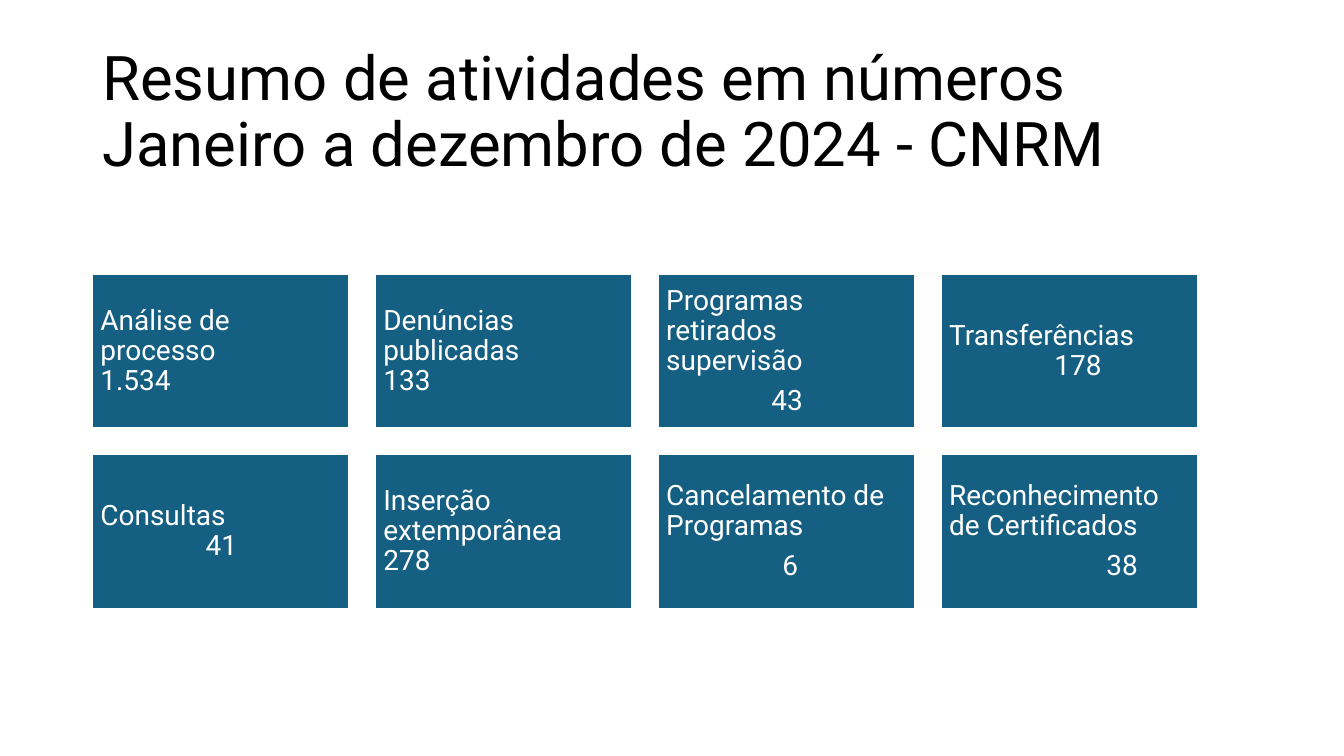
"""Build the CNRM 2024 activity summary slide."""
from pptx import Presentation
from pptx import util as u
from pptx.dml.color import RGBColor
from pptx.enum import shapes, text

HEADING = "Resumo de atividades em números\vJaneiro a dezembro de 2024 - CNRM"
ACTIVITIES = [
    {"label": "Análise de processo", "count": "1.534"},
    {"label": "Denúncias publicadas", "count": "133"},
    {"label": "Programas retirados supervisão", "count": "43", "indent": 2.65, "gap": 7},
    {"label": "Transferências", "count": "178", "indent": 2.65},
    {"label": "Consultas", "count": "41", "indent": 2.65},
    {"label": "Inserção extemporânea", "count": "278"},
    {"label": "Cancelamento de Programas", "count": "6", "indent": 2.93, "gap": 7},
    {"label": "Reconhecimento de Certificados", "count": "38", "indent": 3.96, "gap": 7},
]
THEME = {
    "font": "Roboto",
    "ink": RGBColor(0x00, 0x00, 0x00),
    "card": RGBColor(0x15, 0x60, 0x82),
    "paper": RGBColor(0xFF, 0xFF, 0xFF),
    "heading_size": u.Pt(44),
    "card_size": u.Pt(20),
    "border": u.Pt(1.5),
}
SLIDE_SIZE = u.Cm(33.87), u.Cm(19.05)
HEADING_BOX = [u.Cm(n) for n in (2.33, 1.02, 29.21, 3.68)]
COLUMNS = 4
LEFT, TOP = 2.33, 6.91
WIDTH, HEIGHT, GAP = 6.48, 3.89, 0.65
INSET = u.Cm(0.2)


def apply(target, values):
    for name, value in values.items():
        setattr(target, name, value)


def write(paragraph, wording, size, color, gap=0):
    paragraph.text = wording
    apply(paragraph, {"alignment": text.PP_ALIGN.LEFT, "line_spacing": 0.9,
                      "space_before": u.Pt(gap)})
    for run in paragraph.runs:
        apply(run.font, {"name": THEME["font"], "size": size})
        run.font.color.rgb = color


def add_heading(slide):
    frame = slide.shapes.add_textbox(*HEADING_BOX).text_frame
    apply(frame, {"word_wrap": True, "vertical_anchor": text.MSO_ANCHOR.MIDDLE})
    write(frame.paragraphs[0], HEADING, THEME["heading_size"], THEME["ink"])


def add_card(slide, position, activity):
    row, column = divmod(position, COLUMNS)
    card = slide.shapes.add_shape(
        shapes.MSO_SHAPE.RECTANGLE,
        u.Cm(LEFT + column * (WIDTH + GAP)), u.Cm(TOP + row * (HEIGHT + GAP)),
        u.Cm(WIDTH), u.Cm(HEIGHT))
    card.shadow.inherit = False
    card.fill.solid()
    card.fill.fore_color.rgb = THEME["card"]
    card.line.color.rgb = THEME["paper"]
    card.line.width = THEME["border"]
    frame = card.text_frame
    apply(frame, {"word_wrap": True, "vertical_anchor": text.MSO_ANCHOR.MIDDLE,
                  "margin_left": INSET, "margin_right": INSET,
                  "margin_top": INSET, "margin_bottom": INSET})
    style = THEME["card_size"], THEME["paper"]
    write(frame.paragraphs[0], activity["label"], *style)
    count = frame.add_paragraph()
    write(count, activity["count"], *style, gap=activity.get("gap", 0))
    indent = u.Cm(activity.get("indent", 0))
    count._p.get_or_add_pPr().set("marL", str(int(indent)))


def main():
    deck = Presentation()
    deck.slide_width, deck.slide_height = SLIDE_SIZE
    slide = deck.slides.add_slide(deck.slide_layouts[6])
    add_heading(slide)
    for position, activity in enumerate(ACTIVITIES):
        add_card(slide, position, activity)
    deck.save("out.pptx")


if __name__ == "__main__":
    main()
